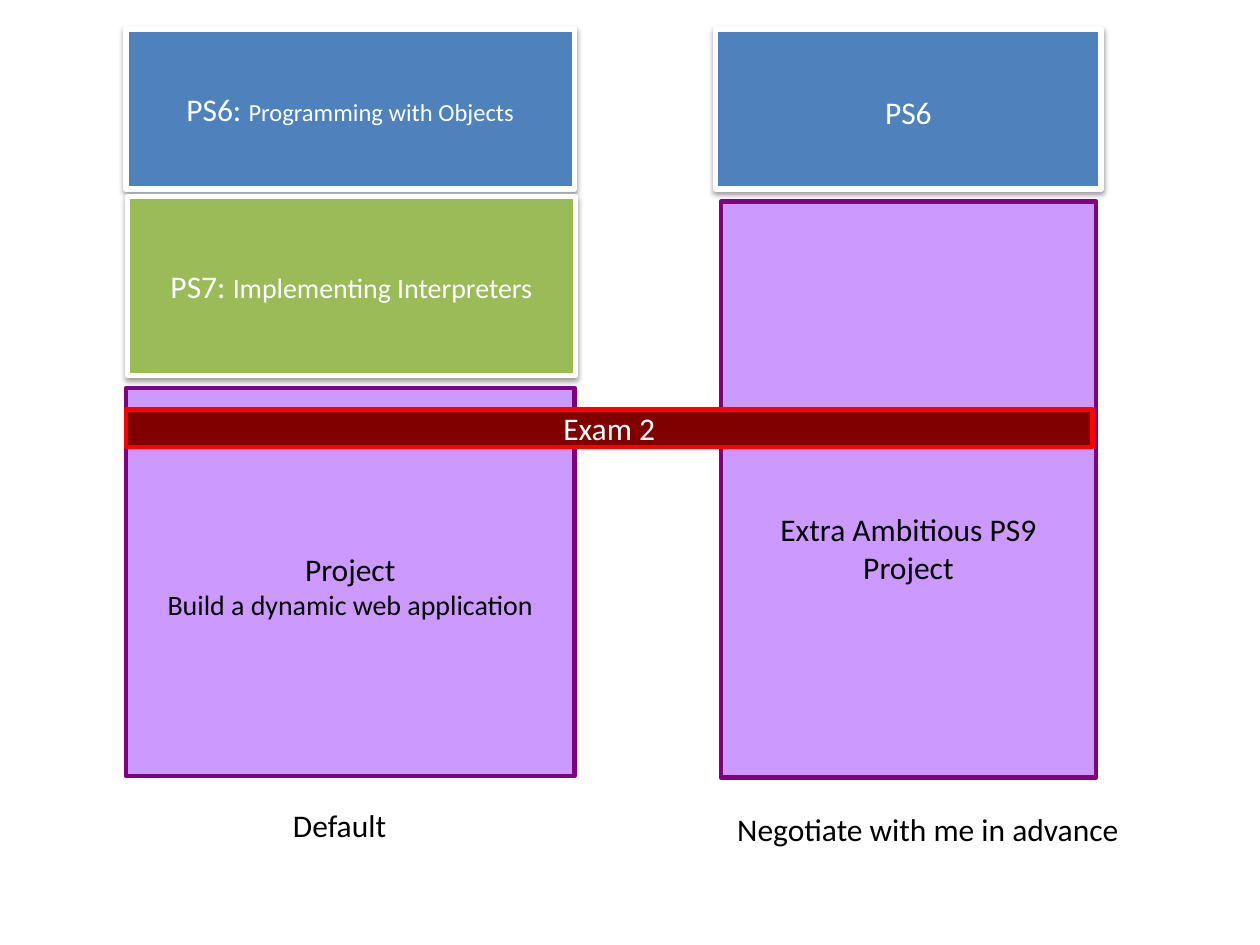
from lxml import etree
from pptx import Presentation
from pptx import util as u
from pptx.dml.color import RGBColor
from pptx.enum import shapes, text
from pptx.oxml.ns import qn

COLORS = {
    "white": "FFFFFF", "black": "000000", "blue": "4F81BD", "green": "9BBB59",
    "lilac": "CC99FF", "purple": "800080", "maroon": "800000", "red": "FF0000",
}


def color(name):
    return RGBColor.from_string(COLORS[name])


def write(shape, lines, ink="black", wrap=True, top=0.05, bottom=0.05):
    """Write centred lines, each a list of (words, size) runs."""
    frame = shape.text_frame
    frame.word_wrap = wrap
    frame.vertical_anchor = text.MSO_ANCHOR.MIDDLE
    frame.margin_top, frame.margin_bottom = u.Inches(top), u.Inches(bottom)
    for index, runs in enumerate(lines):
        paragraph = frame.paragraphs[0] if index == 0 else frame.add_paragraph()
        paragraph.alignment = text.PP_ALIGN.CENTER
        for words, size in runs:
            run = paragraph.add_run()
            run.text = words
            run.font.name = "Calibri"
            run.font.size = u.Pt(size)
            run.font.color.rgb = color(ink)


def add_shadow(shape):
    effects = shape._element.spPr.find(qn("a:effectLst"))
    shadow = etree.SubElement(effects, qn("a:outerShdw"), blurRad=str(u.Pt(3.1)),
                              dist=str(u.Pt(1.6)), dir="5400000", rotWithShape="0")
    shade = etree.SubElement(shadow, qn("a:srgbClr"), val=COLORS["black"])
    etree.SubElement(shade, qn("a:alpha"), val="38000")


def add_block(slide, box, lines, fill, line, width=2.5, shadow=False, **style):
    block = slide.shapes.add_shape(shapes.MSO_SHAPE.RECTANGLE, *map(u.Inches, box))
    block.shadow.inherit = False
    block.fill.solid()
    block.fill.fore_color.rgb = color(fill)
    block.line.color.rgb = color(line)
    block.line.width = u.Pt(width)
    if shadow:
        add_shadow(block)
    write(block, lines, **style)


def add_problem_set(slide, box, lines, fill, **style):
    add_block(slide, box, lines, fill, "white", width=3, shadow=True,
              ink="white", **style)


def add_project(slide, box, lines, **style):
    add_block(slide, box, lines, "lilac", "purple", **style)


def add_caption(slide, box, words):
    caption = slide.shapes.add_textbox(*map(u.Inches, box))
    write(caption, [[(words, 18)]], wrap=False)


def add_default_plan(slide, left, top, width):
    add_problem_set(slide, (left, top, width, 1.27),
                    [[("PS6: ", 18), ("Programming with Objects", 14)]], "blue")
    add_problem_set(slide, (left + 0.01, top + 1.33, width, 1.42),
                    [[("PS7: ", 18), ("Implementing Interpreters", 16)]], "green")
    add_project(slide, (left, top + 2.85, width, 3.08),
                [[("Project", 18)], [("Build a dynamic web application", 16)]],
                top=0.1)
    add_caption(slide, (left + 1.22, top + 6.12, 0.95, 0.4), "Default")


def add_negotiated_plan(slide, left, top, width):
    add_problem_set(slide, (left, top, width, 1.27), [[("PS6", 18)]], "blue", top=0.1)
    # The deep top margin keeps the words below the exam bar
    add_project(slide, (left + 0.04, top + 1.37, width - 0.08, 4.57),
                [[("Extra Ambitious PS9 Project", 18)]], top=0.98)
    add_caption(slide, (left + 0.05, top + 6.15, 3.27, 0.4),
                "Negotiate with me in advance")


def add_exam_bar(slide, left, top, width):
    add_block(slide, (left, top, width, 0.3), [[("Exam 2", 18)]],
              "maroon", "red", ink="white", top=0, bottom=0)


def main():
    presentation = Presentation()
    presentation.slide_width, presentation.slide_height = u.Inches(10), u.Inches(7.5)
    slide = presentation.slides.add_slide(presentation.slide_layouts[6])

    # Two plans side by side, crossed by the exam
    add_default_plan(slide, left=1, top=0.23, width=3.56)
    add_negotiated_plan(slide, left=5.68, top=0.23, width=3.06)
    add_exam_bar(slide, left=1, top=3.25, width=7.67)

    presentation.save("out.pptx")


if __name__ == "__main__":
    main()
